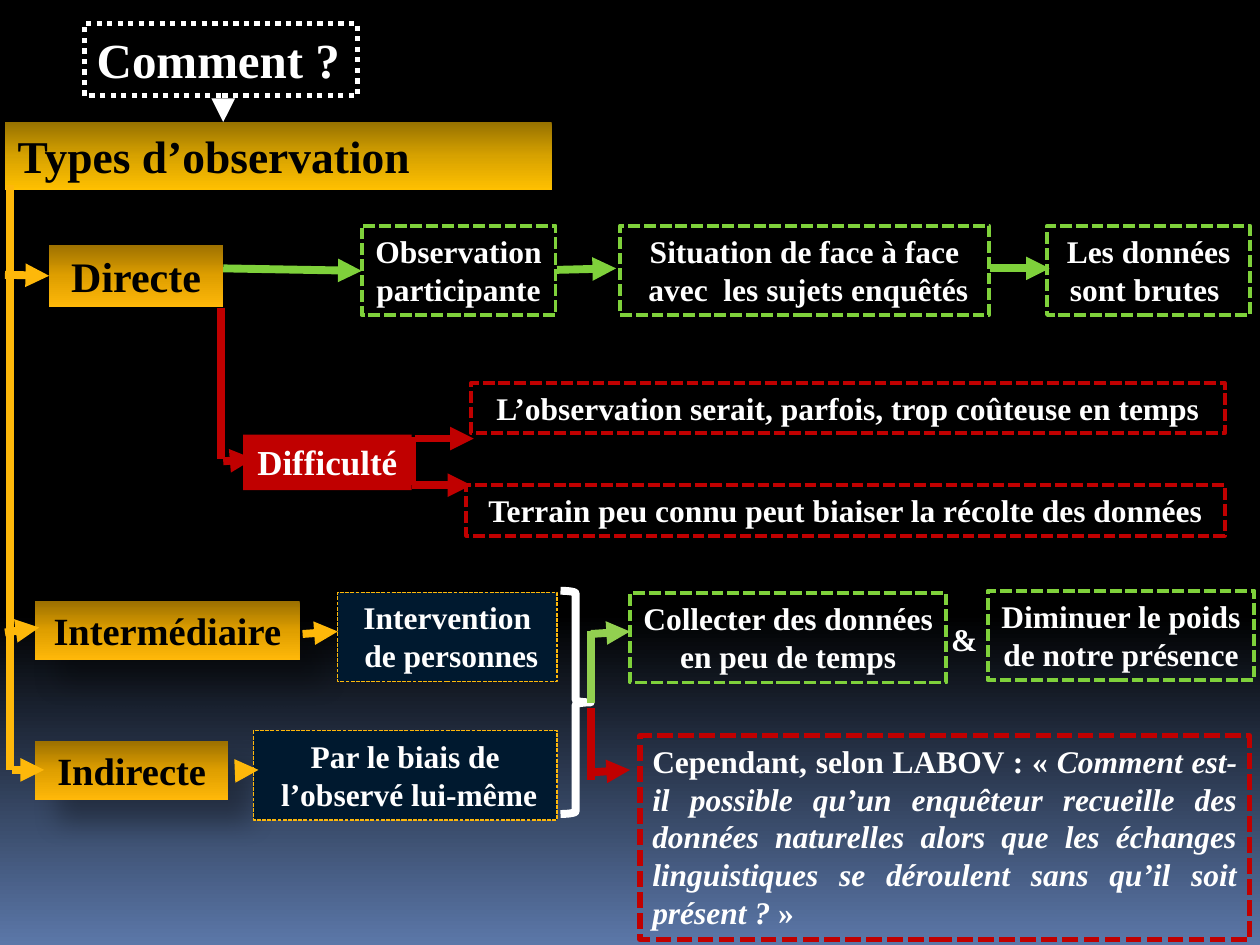
from copy import deepcopy

from lxml import etree
from pptx import Presentation
from pptx import util as u
from pptx.dml.color import RGBColor
from pptx.enum import dml, shapes, text
from pptx.oxml.ns import qn

BLACK = RGBColor(0x00, 0x00, 0x00)
WHITE = RGBColor(0xFF, 0xFF, 0xFF)
STEEL = RGBColor(0x5B, 0x77, 0xA8)
NAVY = RGBColor(0x00, 0x19, 0x2F)
GOLD = RGBColor(0xFE, 0xB8, 0x0A)
GREEN = RGBColor(0x7F, 0xD1, 0x3B)
LIME = RGBColor(0x92, 0xD0, 0x50)
RED = RGBColor(0xC0, 0x00, 0x00)
HEADING_STOPS = [(0, RGBColor(0x97, 0x72, 0x00)), (0.5, RGBColor(0xD7, 0xA2, 0x00)),
                 (1, RGBColor(0xFF, 0xC0, 0x00))]
AMBER_STOPS = [(0, RGBColor(0x9C, 0x70, 0x00)), (0.5, RGBColor(0xDF, 0x9F, 0x00)),
               (1, RGBColor(0xFF, 0xB8, 0x09))]
NIGHT_STOPS = [(0, BLACK), (0.65, BLACK), (1, STEEL)]
FONT = "Times New Roman"
DOT = dml.MSO_LINE.ROUND_DOT
DASH = dml.MSO_LINE.SQUARE_DOT
LEFT, CENTER, JUSTIFY = text.PP_ALIGN.LEFT, text.PP_ALIGN.CENTER, text.PP_ALIGN.JUSTIFY


def fill_gradient(fill, element, colors):
    """Fill from top to bottom with three colour stops."""
    fill.gradient()
    fill.gradient_angle = 270
    stops = element.find(".//" + qn("a:gsLst"))
    stops.insert(1, deepcopy(stops[0]))
    for stop, (position, color) in zip(fill.gradient_stops, colors):
        stop.position = position
        stop.color.rgb = color


def write(box, content, size, color, align):
    """One paragraph per line; "|" switches between upright and italic."""
    frame = box.text_frame
    frame.word_wrap = True
    frame.auto_size = text.MSO_AUTO_SIZE.NONE
    frame.vertical_anchor = text.MSO_ANCHOR.TOP
    for number, line in enumerate(content.split("\n")):
        para = frame.add_paragraph() if number else frame.paragraphs[0]
        para.alignment = align
        for index, part in enumerate(line.split("|")):
            span = para.add_run()
            span.text = part
            span.font.name = FONT
            span.font.size = u.Pt(size)
            span.font.bold = True
            span.font.italic = index % 2 == 1
            span.font.color.rgb = color


deck = Presentation()
deck.slide_width, deck.slide_height = u.Cm(25.4), u.Cm(19.05)
page = deck.slides.add_slide(deck.slide_layouts[5])
fill_gradient(page.background.fill, page.element, NIGHT_STOPS)

# Title
title = page.shapes.title
title.left, title.top, title.width, title.height = u.Cm(0.1), u.Cm(2.46), u.Cm(11.02), u.Cm(1.37)
fill_gradient(title.fill, title.element, HEADING_STOPS)
write(title, "Types d’observation", 26, BLACK, LEFT)

# Box styles: text colour, fill, outline, outline width, dash
QUESTION = (WHITE, None, WHITE, 3, DOT)
TYPE = (BLACK, AMBER_STOPS, None, 0, None)
PROBLEM = (WHITE, RED, None, 0, None)
MEANS = (WHITE, NAVY, GOLD, 0.75, DASH)
BENEFIT = (WHITE, None, GREEN, 2.25, DASH)
LIMIT = (WHITE, None, RED, 2.25, DASH)
QUOTE = (WHITE, None, RED, 3, DASH)
PLAIN = (WHITE, None, None, 0, None)

# Boxes: text, left, top, width, height, size, alignment, style
boxes = [
    ("Comment ?", 1.7, 0.48, 5.51, 1.45, 28, LEFT, QUESTION),
    ("Directe", 0.99, 4.93, 3.51, 1.27, 24, CENTER, TYPE),
    ("Observation participante", 7.29, 4.55, 3.91, 1.8, 18, CENTER, BENEFIT),
    ("Situation de face à face\n avec  les sujets enquêtés", 12.5, 4.55, 7.44, 1.8, 18, CENTER, BENEFIT),
    ("Les données sont brutes ", 21.11, 4.55, 4.09, 1.8, 18, CENTER, BENEFIT),
    ("Difficulté", 4.9, 8.76, 3.4, 1.12, 20, CENTER, PROBLEM),
    ("L’observation serait, parfois, trop coûteuse en temps", 9.5, 7.72, 15.19, 1.02, 18, CENTER, LIMIT),
    ("Terrain peu connu peut biaiser la récolte des données", 9.4, 9.78, 15.29, 1.02, 18, CENTER, LIMIT),
    ("Intermédiaire", 0.71, 12.12, 5.33, 1.19, 22, CENTER, TYPE),
    ("Indirecte", 0.71, 14.94, 3.89, 1.19, 22, CENTER, TYPE),
    ("Intervention\n de personnes", 6.81, 11.94, 4.42, 1.8, 18, CENTER, MEANS),
    ("Par le biais de\n l’observé lui-même", 5.11, 14.73, 6.12, 1.8, 18, CENTER, MEANS),
    ("Collecter des données en peu de temps", 12.7, 11.96, 6.38, 1.8, 18, CENTER, BENEFIT),
    ("&", 18.82, 12.37, 1.24, 1.02, 18, CENTER, PLAIN),
    ("Diminuer le poids de notre présence", 19.91, 11.91, 5.38, 1.8, 18, CENTER, BENEFIT),
    ("Cependant, selon LABOV : « |Comment est-il possible qu’un enquêteur recueille des "
     "données naturelles alors que les échanges linguistiques se déroulent sans qu’il soit "
     "présent ?| »", 12.9, 14.83, 12.29, 4.11, 18, JUSTIFY, QUOTE),
]
for content, left, top, width, height, size, align, style in boxes:
    color, fill, outline, weight, dash = style
    box = page.shapes.add_textbox(u.Cm(left), u.Cm(top), u.Cm(width), u.Cm(height))
    write(box, content, size, color, align)
    if style is TYPE:
        fill_gradient(box.fill, box.element, fill)
    elif fill is not None:
        box.fill.solid()
        box.fill.fore_color.rgb = fill
    if outline is not None:
        box.line.color.rgb = outline
        box.line.width = u.Pt(weight)
        box.line.dash_style = dash
    if style in (TYPE, PROBLEM):
        # Soft shadow towards the lower right
        effects = etree.SubElement(box.element.spPr, qn("a:effectLst"))
        shadow = etree.SubElement(effects, qn("a:outerShdw"), blurRad=str(u.Pt(15)),
                                  dist=str(u.Pt(18)), dir="2700000")
        shade = etree.SubElement(shadow, qn("a:srgbClr"), val=str(BLACK))
        etree.SubElement(shade, qn("a:alpha"), val="30000")

# Brace joining the two kinds of mediation
brace = page.shapes.add_shape(shapes.MSO_SHAPE.RIGHT_BRACE,
                              u.Cm(11.3), u.Cm(11.91), u.Cm(0.61), u.Cm(4.5))
brace.shadow.inherit = False
brace.fill.background()
brace.line.color.rgb = WHITE
brace.line.width = u.Pt(4.5)

# Stems and arrows: start x, start y, end x, end y, colour, arrowhead
links = [
    (0.2, 3.73, 0.2, 15.52, GOLD, False),
    (4.5, 2.01, 4.5, 2.46, WHITE, True),
    (0.1, 5.54, 0.99, 5.56, GOLD, True),
    (0.1, 12.75, 0.79, 12.65, GOLD, True),
    (0.25, 15.52, 0.89, 15.52, GOLD, True),
    (6.1, 12.78, 6.81, 12.73, GOLD, True),
    (4.75, 15.54, 5.21, 15.52, GOLD, True),
    (4.5, 5.41, 7.29, 5.46, GREEN, True),
    (11.23, 5.44, 12.42, 5.41, GREEN, True),
    (19.96, 5.41, 21.16, 5.41, GREEN, True),
    (4.45, 6.2, 4.45, 9.25, RED, False),
    (4.5, 9.3, 5.11, 9.25, RED, True),
    (8.31, 8.81, 8.31, 9.78, RED, False),
    (8.36, 8.84, 9.55, 8.84, RED, True),
    (8.31, 9.78, 9.5, 9.78, RED, True),
    (11.91, 12.73, 11.91, 14.17, LIME, False),
    (11.91, 12.78, 12.7, 12.73, LIME, True),
    (11.91, 14.27, 11.91, 15.72, RED, False),
    (11.91, 15.57, 12.7, 15.52, RED, True),
]
for x1, y1, x2, y2, color, pointed in links:
    link = page.shapes.add_connector(shapes.MSO_CONNECTOR.STRAIGHT,
                                     u.Cm(x1), u.Cm(y1), u.Cm(x2), u.Cm(y2))
    link.line.color.rgb = color
    link.line.width = u.Pt(4.5)
    if pointed:
        etree.SubElement(link.line._get_or_add_ln(), qn("a:tailEnd"), type="triangle")
    etree.SubElement(link.element.spPr, qn("a:effectLst"))

deck.save("out.pptx")
